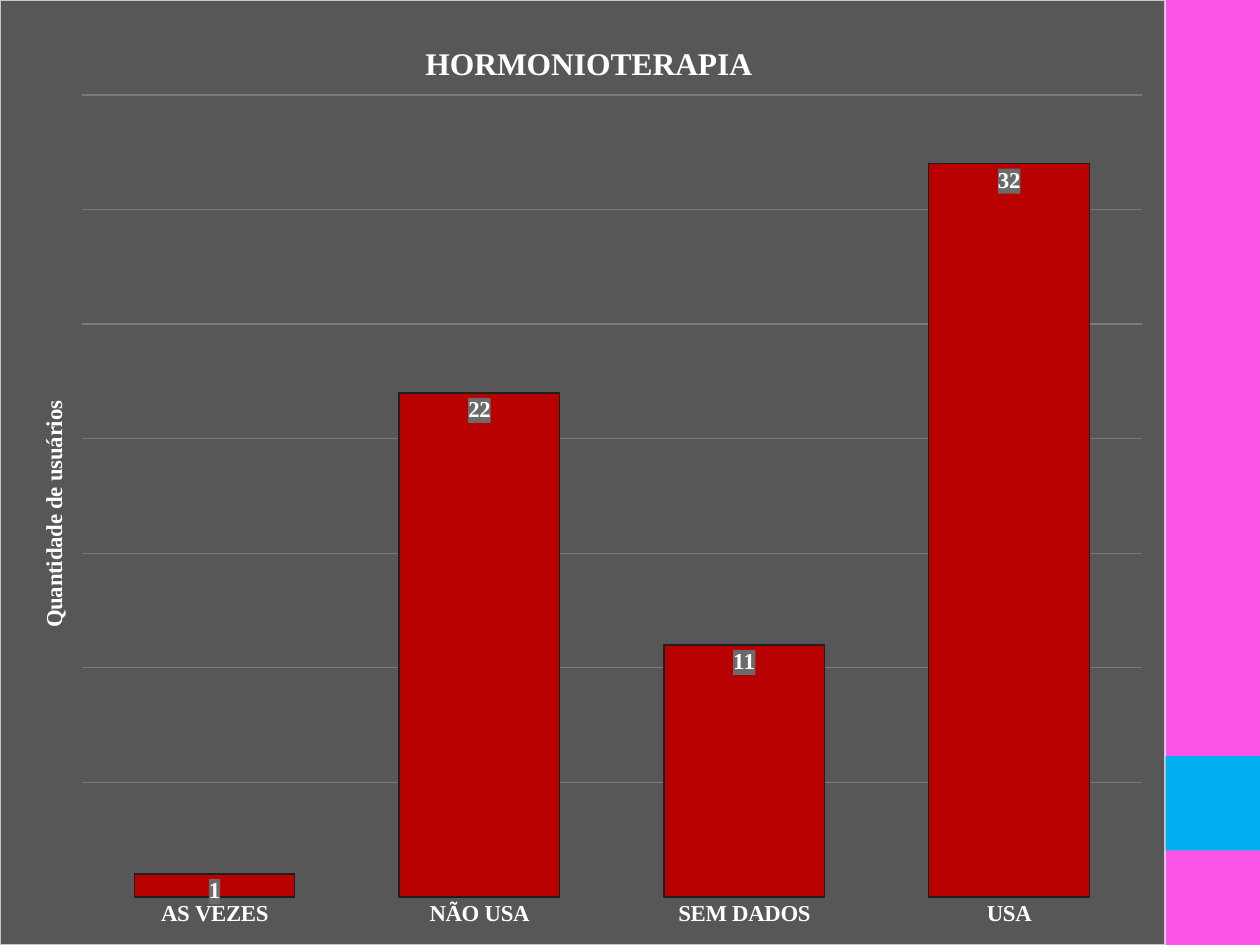
import pptx
import pptx.chart.data
import pptx.dml.color
import pptx.enum.chart
import pptx.enum.shapes
import pptx.oxml
import pptx.oxml.ns
import pptx.util

Pt = pptx.util.Pt
qn = pptx.oxml.ns.qn

# Content
TITLE = "HORMONIOTERAPIA"
AXIS_TITLE = "Quantidade de usuários"
USERS = {"AS VEZES": 1, "NÃO USA": 22, "SEM DADOS": 11, "USA": 32}

# Sizes in points and colours
PAGE_WIDTH, PAGE_HEIGHT, BAND = 720, 540, 54
CHART_WIDTH = PAGE_WIDTH - BAND
BAND_BLOCKS = [(0, PAGE_HEIGHT, "FB55E7"), (432, BAND, "00B0F0")]
WHITE, DARK, GREY, RED = "FFFFFF", "1F1F1F", "575757", "B80000"
GRID, BORDER, LABEL_FILL = "7A7A7A", "C7C7C7", "6B6B6B"
LABEL_FONT = {"name": "Times New Roman", "size": Pt(13), "bold": True}
TITLE_FONT = {**LABEL_FONT, "size": Pt(18)}


def set_values(target, values):
    for name, value in values.items():
        setattr(target, name, value)


def paint(color_format, color):
    color_format.rgb = pptx.dml.color.RGBColor.from_string(color)


def set_fill(fill, color):
    fill.solid()
    paint(fill.fore_color, color)


def set_line(line, color, width):
    set_fill(line.fill, color)
    line.width = Pt(width)


def set_font(font, values, color=WHITE):
    set_values(font, values)
    paint(font.color, color)


def write_title(title, text, values):
    title.text_frame.text = text
    set_font(title.text_frame.paragraphs[0].runs[0].font, values)


def chart_element(content):
    namespaces = pptx.oxml.ns.nsdecls("c", "a")
    return pptx.oxml.parse_xml(content.replace(">", f" {namespaces}>", 1))


def frame_properties(fill, line=None):
    outline = (f'<a:ln w="{Pt(0.75)}"><a:solidFill><a:srgbClr val="{line}"/>'
               "</a:solidFill></a:ln>" if line else "<a:ln><a:noFill/></a:ln>")
    return chart_element(f'<c:spPr><a:solidFill><a:srgbClr val="{fill}"/>'
                         f"</a:solidFill>{outline}</c:spPr>")


def place(parent, index, inner=False, **fractions):
    """Give a chart part a fixed place, in fractions of the chart."""
    for old in parent.findall(qn("c:layout")):
        parent.remove(old)
    target = '<c:layoutTarget val="inner"/>' if inner else ""
    modes = "".join(f'<c:{key}Mode val="edge"/>' for key in "xy")
    values = "".join(f'<c:{key} val="{value}"/>' for key, value in fractions.items())
    parent.insert(index, chart_element(
        f"<c:layout><c:manualLayout>{target}{modes}{values}</c:manualLayout></c:layout>"))


deck = pptx.Presentation()
set_values(deck, {"slide_width": Pt(PAGE_WIDTH), "slide_height": Pt(PAGE_HEIGHT)})
page = deck.slides.add_slide(deck.slide_layouts[6])

# Side band
for top, height, color in BAND_BLOCKS:
    block = page.shapes.add_shape(pptx.enum.shapes.MSO_SHAPE.RECTANGLE,
                                  Pt(CHART_WIDTH), Pt(top), Pt(BAND), Pt(height))
    block.shadow.inherit = False
    set_fill(block.fill, color)
    block.line.fill.background()

# Chart
data = pptx.chart.data.CategoryChartData()
data.categories = list(USERS)
data.add_series("Series 1", list(USERS.values()))
chart = page.shapes.add_chart(pptx.enum.chart.XL_CHART_TYPE.COLUMN_CLUSTERED, 0, 0,
                              Pt(CHART_WIDTH), Pt(PAGE_HEIGHT), data).chart
set_font(chart.font, {"name": "Calibri", "size": Pt(10)}, DARK)
set_values(chart, {"has_legend": False, "has_title": True})
write_title(chart.chart_title, TITLE, TITLE_FONT)
chart.element.find(qn("c:chart")).addnext(frame_properties(GREY, BORDER))

# Axes
categories, values = chart.category_axis, chart.value_axis
categories.major_tick_mark = pptx.enum.chart.XL_TICK_MARK.NONE
set_font(categories.tick_labels.font, LABEL_FONT)
set_line(categories.format.line, GREY, 1.5)
set_values(values, {"minimum_scale": 0, "maximum_scale": 35, "major_unit": 5,
                    "has_major_gridlines": True, "has_title": True, "visible": False})
set_line(values.major_gridlines.format.line, GRID, 0.75)
write_title(values.axis_title, AXIS_TITLE, LABEL_FONT)
turn = values.axis_title.text_frame._txBody.find(qn("a:bodyPr"))
turn.set("rot", "-5400000")
turn.set("vert", "horz")

# Columns and their labels
plot = chart.plots[0]
set_values(plot, {"gap_width": 65, "vary_by_categories": False})
columns = plot.series[0]
set_fill(columns.format.fill, RED)
set_line(columns.format.line, DARK, 0.75)
labels = columns.data_labels
set_values(labels, {"show_value": True,
                    "position": pptx.enum.chart.XL_LABEL_POSITION.INSIDE_END})
set_font(labels.font, LABEL_FONT)
labels_text = chart.element.xpath(".//c:ser/c:dLbls/c:txPr")[0]
labels_text.addprevious(frame_properties(LABEL_FILL))

# Places inside the chart
place(chart.element.xpath("c:chart/c:plotArea")[0], 0, inner=True,
      x=0.07, y=0.1, w=0.91, h=0.85)
place(chart.element.xpath("c:chart/c:title")[0], 1, x=0.36, y=0.04)
place(chart.element.xpath(".//c:valAx/c:title")[0], 1, x=0.03, y=0.42)

deck.save("out.pptx")
